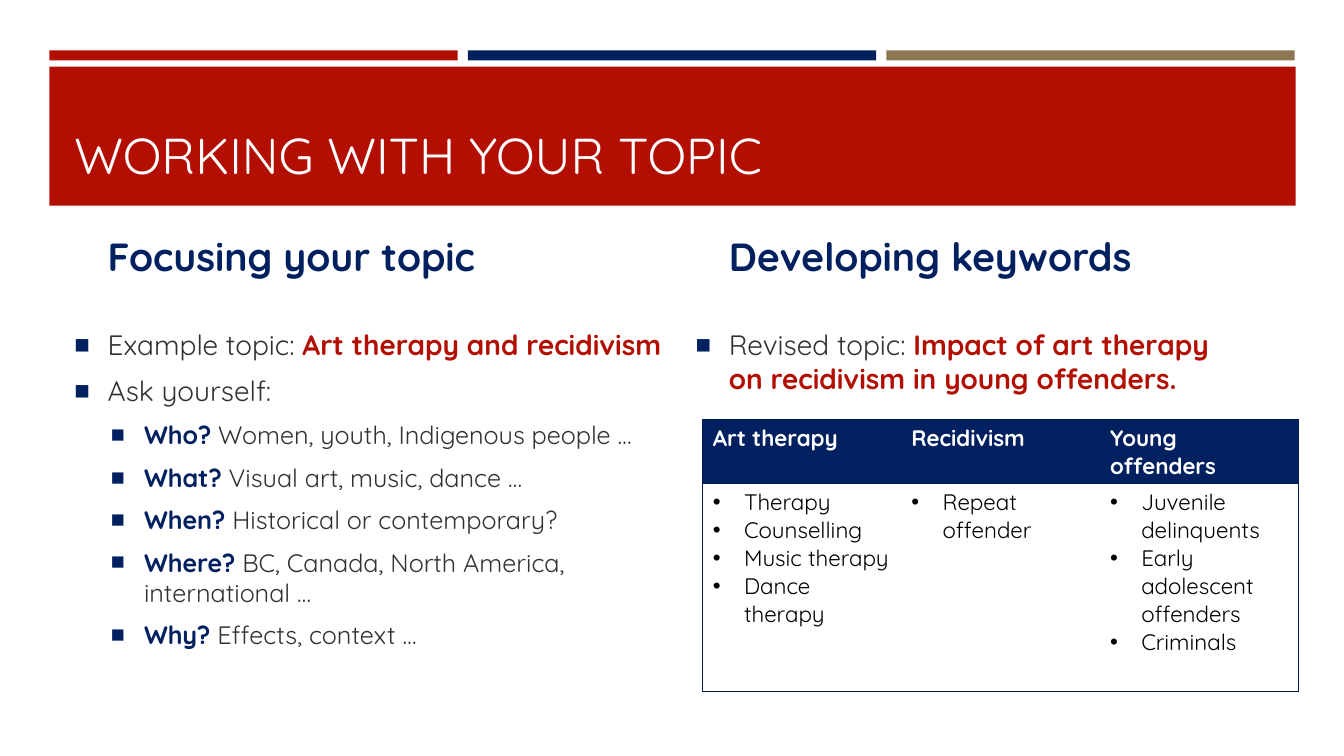
from dataclasses import dataclass

from lxml import etree
from pptx import Presentation
from pptx import util as u
from pptx.dml.color import RGBColor
from pptx.enum import shapes, text
from pptx.oxml import ns

EMU_PER_PX = 9144  # 100 px to the inch


@dataclass(frozen=True)
class Theme:
    font: str = "Quicksand"
    red: str = "B20F02"
    navy: str = "002060"
    tan: str = "8D7654"
    border: str = "001D56"
    ink: str = "323232"
    black: str = "000000"
    white: str = "FFFFFF"
    title: int = 36
    heading: int = 28
    body: int = 20
    detail: int = 18
    cell: int = 16


def px(length):
    return u.Emu(length * EMU_PER_PX)


def add_element(parent, tag, **attributes):
    return etree.SubElement(parent, ns.qn(tag), attributes)


class Slide:
    PLAIN_TABLE = "{2D5ABB26-0587-4C30-8999-92F81FD0307C}"

    def __init__(self, deck, theme):
        self.theme = theme
        self.page = deck.slides.add_slide(deck.slide_layouts[6])

    def bar(self, left, top, width, height, color):
        box = self.page.shapes.add_shape(
            shapes.MSO_SHAPE.RECTANGLE, *map(px, (left, top, width, height)))
        box.shadow.inherit = False
        box.fill.solid()
        box.fill.fore_color.rgb = RGBColor.from_string(color)
        box.line.fill.background()

    def text_box(self, left, top, width, height, anchor=text.MSO_ANCHOR.TOP):
        frame = self.page.shapes.add_textbox(
            *map(px, (left, top, width, height))).text_frame
        frame.word_wrap = True
        frame.vertical_anchor = anchor
        return frame

    def paragraph(self, frame, spans, size, first=False):
        """Add a paragraph of (wording, color, bold) spans."""
        para = frame.paragraphs[0] if first else frame.add_paragraph()
        para.font.name = self.theme.font
        para.font.size = u.Pt(size)
        for wording, color, bold in spans:
            span = para.add_run()
            span.text = wording
            span.font.bold = bold
            span.font.color.rgb = RGBColor.from_string(color)
        return para

    def bullet(self, para, mark, margin, hanging, color=None, percent=100):
        props = para._p.get_or_add_pPr()
        props.set("marL", str(px(margin)))
        props.set("indent", str(px(-hanging)))
        # Bullet settings must come before the default run properties
        run_defaults = props.find(ns.qn("a:defRPr"))
        if color:
            add_element(add_element(props, "a:buClr"), "a:srgbClr", val=color)
        add_element(props, "a:buSzPct", val=str(percent * 1000))
        add_element(props, "a:buFont", typeface="Arial")
        add_element(props, "a:buChar", char=mark)
        props.append(run_defaults)

    def bullet_list(self, frame, items):
        """Fill a frame with (level, spans) items."""
        for index, (level, spans) in enumerate(items):
            size = self.theme.detail if level else self.theme.body
            para = self.paragraph(frame, spans, size, index == 0)
            para.level = level
            para.space_before = u.Pt(size * 0.15)
            para.space_after = u.Pt(6)
            self.bullet(para, "■", 69 if level else 33, 33, self.theme.navy, 92)

    def border(self, cell, sides):
        props = cell._tc.get_or_add_tcPr()
        for side in sides:
            line = add_element(props, f"a:ln{side}", w=str(u.Pt(1)))
            fill = add_element(line, "a:solidFill")
            add_element(fill, "a:srgbClr", val=self.theme.border)

    def keyword_table(self, left, top, column_width, row_heights, columns):
        theme = self.theme
        last = len(columns) - 1
        table = self.page.shapes.add_table(
            2, len(columns), px(left), px(top),
            px(column_width * len(columns)), px(sum(row_heights))).table
        table._tbl.tblPr.find(ns.qn("a:tableStyleId")).text = self.PLAIN_TABLE
        for row, height in zip(table.rows, row_heights):
            row.height = px(height)
        for index, (heading, keywords) in enumerate(columns.items()):
            table.columns[index].width = px(column_width)
            head, body = table.cell(0, index), table.cell(1, index)
            edges = ["L"] * (index == 0) + ["R"] * (index == last) + ["T"]
            self.border(head, edges)
            self.border(body, edges + ["B"])
            head.fill.solid()
            head.fill.fore_color.rgb = RGBColor.from_string(theme.navy)
            body.fill.background()
            self.paragraph(head.text_frame, [(heading, theme.white, True)],
                           theme.cell, True)
            for number, keyword in enumerate(keywords):
                para = self.paragraph(body.text_frame,
                                      [(keyword, theme.black, False)],
                                      theme.cell, number == 0)
                self.bullet(para, "•", 31, 31)


def main():
    theme = Theme()
    deck = Presentation()
    deck.slide_width, deck.slide_height = px(1333), px(750)
    slide = Slide(deck, theme)

    # Banner with three accent bars
    for index, color in enumerate((theme.red, theme.navy, theme.tan)):
        slide.bar(49 + 415 * index, 50, 405, 10, color)
    slide.bar(49, 66, 1236, 138, theme.red)
    title = slide.text_box(64, 80, 1206, 108, text.MSO_ANCHOR.BOTTOM)
    slide.paragraph(title, [("WORKING WITH YOUR TOPIC", theme.white, False)],
                    theme.title, True)

    # Column headings
    for left, heading in ((97, "Focusing your topic"),
                          (713, "Developing keywords")):
        slide.paragraph(slide.text_box(left, 226, 556, 60),
                        [(heading, theme.navy, True)], theme.heading, True)

    # Focusing questions
    questions = {
        "Who?": "Women, youth, Indigenous people …",
        "What?": "Visual art, music, dance …",
        "When?": "Historical or contemporary?",
        "Where?": "BC, Canada, North America, international …",
        "Why?": "Effects, context …",
    }
    focus = [
        (0, [("Example topic: ", theme.ink, False),
             ("Art therapy and recidivism", theme.red, True)]),
        (0, [("Ask yourself:", theme.ink, False)]),
    ]
    focus += [(1, [(question, theme.navy, True),
                   (f" {answer}", theme.ink, False)])
              for question, answer in questions.items()]
    slide.bullet_list(slide.text_box(64, 320, 616, 409), focus)

    # Revised topic and its keywords
    slide.bullet_list(slide.text_box(680, 320, 545, 96), [
        (0, [("Revised topic: ", theme.ink, False),
             ("Impact of art therapy on recidivism in young offenders.",
              theme.red, True)]),
    ])
    slide.keyword_table(697, 416, 197, (45, 207), {
        "Art therapy": ["Therapy", "Counselling", "Music therapy",
                        "Dance therapy"],
        "Recidivism": ["Repeat offender"],
        "Young offenders": ["Juvenile delinquents",
                            "Early adolescent offenders", "Criminals"],
    })

    deck.save("out.pptx")


if __name__ == "__main__":
    main()
